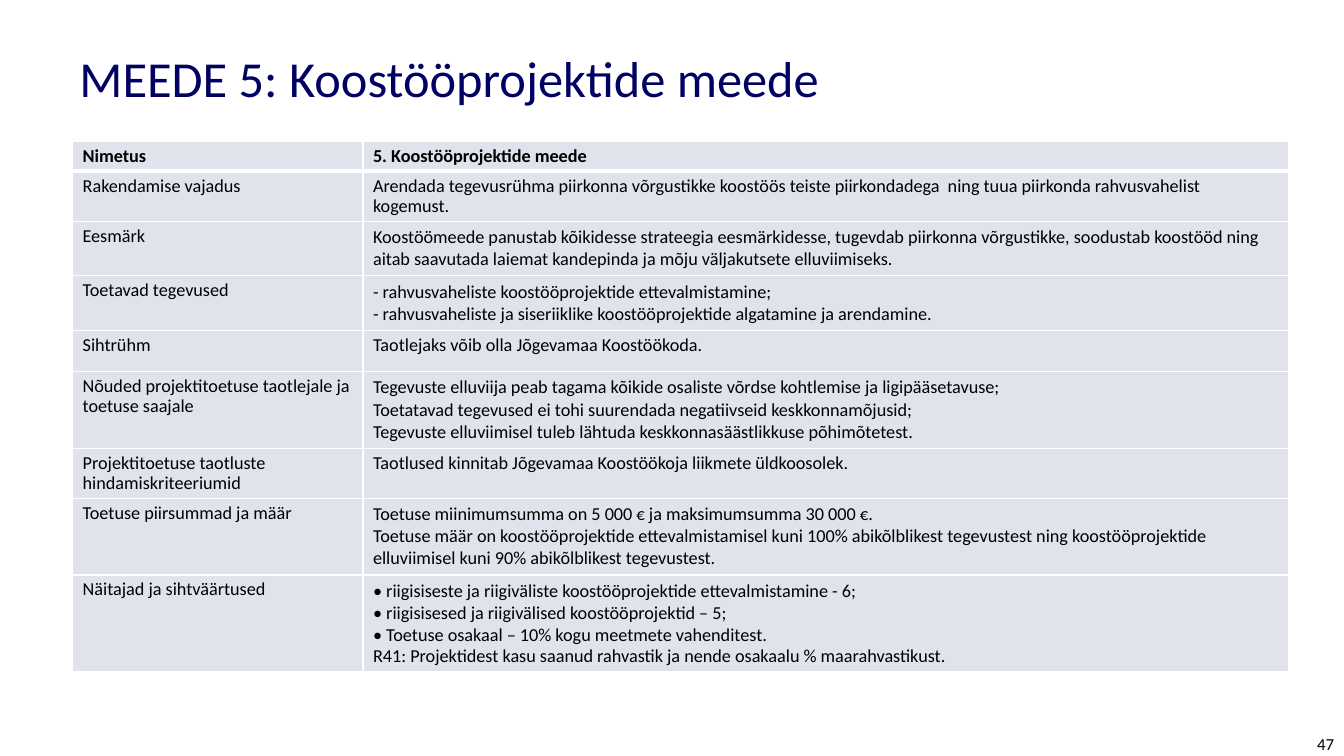
from dataclasses import dataclass

from lxml.etree import SubElement
from pptx import Presentation
from pptx.dml.color import RGBColor
from pptx.enum.text import MSO_ANCHOR as Anchor, PP_ALIGN as Align
from pptx.oxml.ns import qn
from pptx.slide import Slide
from pptx.table import _Cell as Cell
from pptx.text.text import TextFrame
from pptx.util import Inches, Pt

FONT = "Calibri"
BLACK = RGBColor(0x00, 0x00, 0x00)
NAVY = RGBColor(0x01, 0x01, 0x63)
WHITE = RGBColor(0xFF, 0xFF, 0xFF)
PALE = RGBColor(0xE0, 0xE3, 0xEC)
TIGHT = 0.9
EURO = "€"


@dataclass
class Line:
    text: str
    spacing: float | None = None


@dataclass
class Row:
    height: float
    label: str
    lines: list[Line]


COLUMN_WIDTHS = (2.88, 9.18)
ROWS = [
    Row(0.29, "Nimetus", [Line("5. Koostööprojektide meede", TIGHT)]),
    Row(0.34, "Rakendamise vajadus", [
        Line("Arendada tegevusrühma piirkonna võrgustikke koostöös teiste piirkondadega  ning tuua "
             "piirkonda rahvusvahelist kogemust.", TIGHT)]),
    Row(0.27, "Eesmärk", [
        Line("Koostöömeede panustab kõikidesse strateegia eesmärkidesse, tugevdab piirkonna võrgustikke, "
             "soodustab koostööd ning aitab saavutada laiemat kandepinda ja mõju väljakutsete elluviimiseks.")]),
    Row(0.31, "Toetavad tegevused", [
        Line("- rahvusvaheliste koostööprojektide ettevalmistamine;"),
        Line("- rahvusvaheliste ja siseriiklike koostööprojektide algatamine ja arendamine.")]),
    Row(0.41, "Sihtrühm", [Line("Taotlejaks võib olla Jõgevamaa Koostöökoda.", TIGHT)]),
    Row(0.47, "Nõuded projektitoetuse taotlejale ja toetuse saajale", [
        Line("Tegevuste elluviija peab tagama kõikide osaliste võrdse kohtlemise ja ligipääsetavuse;"),
        Line("Toetatavad tegevused ei tohi suurendada negatiivseid keskkonnamõjusid;"),
        Line("Tegevuste elluviimisel tuleb lähtuda keskkonnasäästlikkuse põhimõtetest.")]),
    Row(0.41, "Projektitoetuse taotluste hindamiskriteeriumid", [
        Line("Taotlused kinnitab Jõgevamaa Koostöökoja liikmete üldkoosolek.", TIGHT)]),
    Row(0.41, "Toetuse piirsummad ja määr", [
        Line("Toetuse miinimumsumma on 5 000 € ja maksimumsumma 30 000 €."),
        Line("Toetuse määr on koostööprojektide ettevalmistamisel kuni 100% abikõlblikest tegevustest ning "
             "koostööprojektide elluviimisel kuni 90% abikõlblikest tegevustest.")]),
    Row(0.41, "Näitajad ja sihtväärtused", [
        Line("• riigisiseste ja riigiväliste koostööprojektide ettevalmistamine - 6;"),
        Line("• riigisisesed ja riigivälised koostööprojektid – 5;"),
        Line("• Toetuse osakaal – 10% kogu meetmete vahenditest."),
        Line("R41: Projektidest kasu saanud rahvastik ja nende osakaalu % maarahvastikust.", TIGHT)]),
]


def write_text(frame: TextFrame, lines: list[Line], *, size: float, color: RGBColor = BLACK,
               bold: bool = False, align: Align = Align.LEFT) -> None:
    """Write one paragraph per line, with euro signs one point smaller."""
    for index, line in enumerate(lines):
        paragraph = frame.add_paragraph() if index else frame.paragraphs[0]
        paragraph.alignment = align
        if line.spacing:
            paragraph.line_spacing = line.spacing
        for piece in line.text.replace(EURO, f"\n{EURO}\n").split("\n"):
            run = paragraph.add_run()
            run.text = piece
            run.font.name = FONT
            run.font.size = Pt(size - 1 if piece == EURO else size)
            run.font.bold = bold
            run.font.color.rgb = color


def add_text_box(slide: Slide, text: str, left: float, top: float, width: float, height: float,
                 **text_format) -> None:
    frame = slide.shapes.add_textbox(Inches(left), Inches(top), Inches(width), Inches(height)).text_frame
    frame.word_wrap = True
    frame.vertical_anchor = Anchor.MIDDLE
    write_text(frame, [Line(text)], **text_format)


def style_cell(cell: Cell, header: bool) -> None:
    """White borders, heavier below the header, on a pale fill."""
    borders = {"a:lnL": 1, "a:lnR": 1, "a:lnT": 1, "a:lnB": 3} if header else {
        "a:lnL": 1, "a:lnR": 1, "a:lnB": 1}
    properties = cell._tc.get_or_add_tcPr()
    for tag, width in borders.items():
        border = SubElement(properties, qn(tag), w=str(Pt(width)))
        SubElement(SubElement(border, qn("a:solidFill")), qn("a:srgbClr"), val=str(WHITE))
    cell.fill.solid()
    cell.fill.fore_color.rgb = PALE


def add_measure_table(slide: Slide) -> None:
    frame = slide.shapes.add_table(len(ROWS), len(COLUMN_WIDTHS), Inches(0.72), Inches(1.4),
                                   Inches(12.07), Inches(5.19))
    table = frame.table
    table.horz_banding = False
    for column, width in zip(table.columns, COLUMN_WIDTHS):
        column.width = Inches(width)
    for index, row in enumerate(ROWS):
        table.rows[index].height = Inches(row.height)
        header = index == 0
        for cell, lines in zip(table.rows[index].cells, ([Line(row.label, TIGHT)], row.lines)):
            style_cell(cell, header)
            write_text(cell.text_frame, lines, size=13, bold=header)
    frame.height = Inches(5.19)


def main() -> None:
    presentation = Presentation()
    presentation.slide_width = Inches(13.33)
    presentation.slide_height = Inches(7.5)
    slide = presentation.slides.add_slide(presentation.slide_layouts[6])

    # Measure table
    add_measure_table(slide)

    # Title and page number
    add_text_box(slide, "MEEDE 5: Koostööprojektide meede", 0.69, 0.39, 11.96, 0.76, size=36, color=NAVY)
    add_text_box(slide, "47", 11.71, 7.25, 1.62, 0.25, size=12, align=Align.RIGHT)

    presentation.save("out.pptx")


if __name__ == "__main__":
    main()
